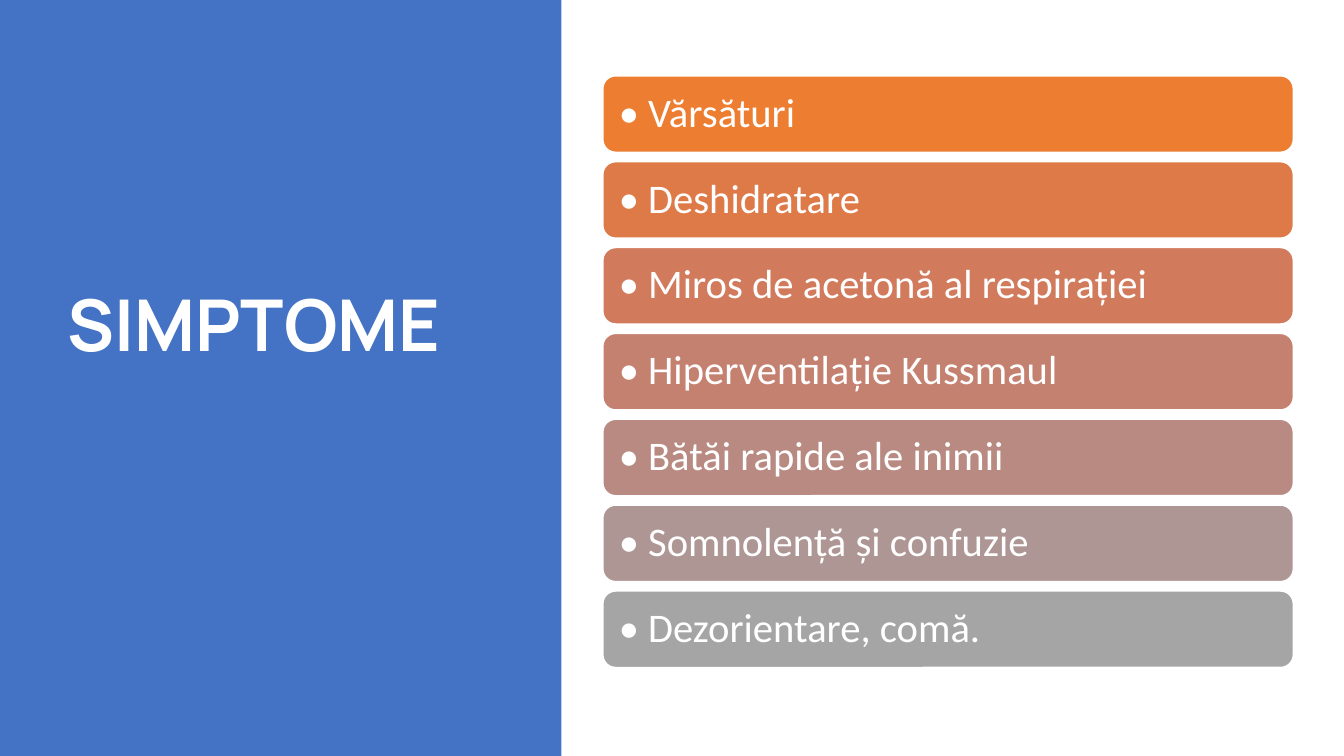
import pptx
import pptx.util
import pptx.dml.color
import pptx.enum.shapes
import pptx.enum.text

Pt = pptx.util.Pt
RGB = pptx.dml.color.RGBColor
Shape = pptx.enum.shapes.MSO_SHAPE
Align = pptx.enum.text.PP_ALIGN
MIDDLE = pptx.enum.text.MSO_ANCHOR.MIDDLE

WHITE = RGB(0xFF, 0xFF, 0xFF)
BLUE = RGB(0x44, 0x72, 0xC4)

ITEMS = [
    ("Vărsături", RGB(0xED, 0x7D, 0x31)),
    ("Deshidratare", RGB(0xDE, 0x7A, 0x47)),
    ("Miros de acetonă al respirației", RGB(0xD1, 0x7B, 0x5C)),
    ("Hiperventilație Kussmaul", RGB(0xC4, 0x81, 0x70)),
    ("Bătăi rapide ale inimii", RGB(0xB9, 0x8A, 0x82)),
    ("Somnolență și confuzie", RGB(0xAE, 0x96, 0x94)),
    ("Dezorientare, comă.", RGB(0xA5, 0xA5, 0xA5)),
]


def add_panel(kind, left, top, width, height, color):
    panel = slide.shapes.add_shape(kind, Pt(left), Pt(top), Pt(width), Pt(height))
    panel.shadow.inherit = False
    panel.fill.solid()
    panel.fill.fore_color.rgb = color
    return panel


def write(frame, text, face, size):
    frame.word_wrap = True
    frame.vertical_anchor = MIDDLE
    line = frame.paragraphs[0]
    line.text = text
    line.alignment = Align.LEFT
    line.line_spacing = 0.9
    line.font.name = face
    line.font.size = Pt(size)
    line.font.color.rgb = WHITE
    return line


deck = pptx.Presentation()
deck.slide_width = Pt(960)
deck.slide_height = Pt(540)
slide = deck.slides.add_slide(deck.slide_layouts[6])

side = add_panel(Shape.RECTANGLE, 0, 0, 401, 540, BLUE)
side.line.fill.background()

title = slide.shapes.add_textbox(Pt(41), Pt(49), Pt(299.5), Pt(433.5))
title.text_frame.margin_bottom = Pt(66)
head = write(title.text_frame, "SIMPTOME", "Manrope", 51)
head.font.bold = True

for row, (text, color) in enumerate(ITEMS):
    bar = add_panel(Shape.ROUNDED_RECTANGLE, 430.6, 54.2 + row * 61.33, 493.2, 54.6, color)
    bar.line.color.rgb = WHITE
    bar.line.width = Pt(1)
    frame = bar.text_frame
    frame.margin_left = frame.margin_right = Pt(8.7)
    frame.margin_top = frame.margin_bottom = Pt(8.7)
    write(frame, "• " + text, "Calibri", 29)

deck.save("out.pptx")
